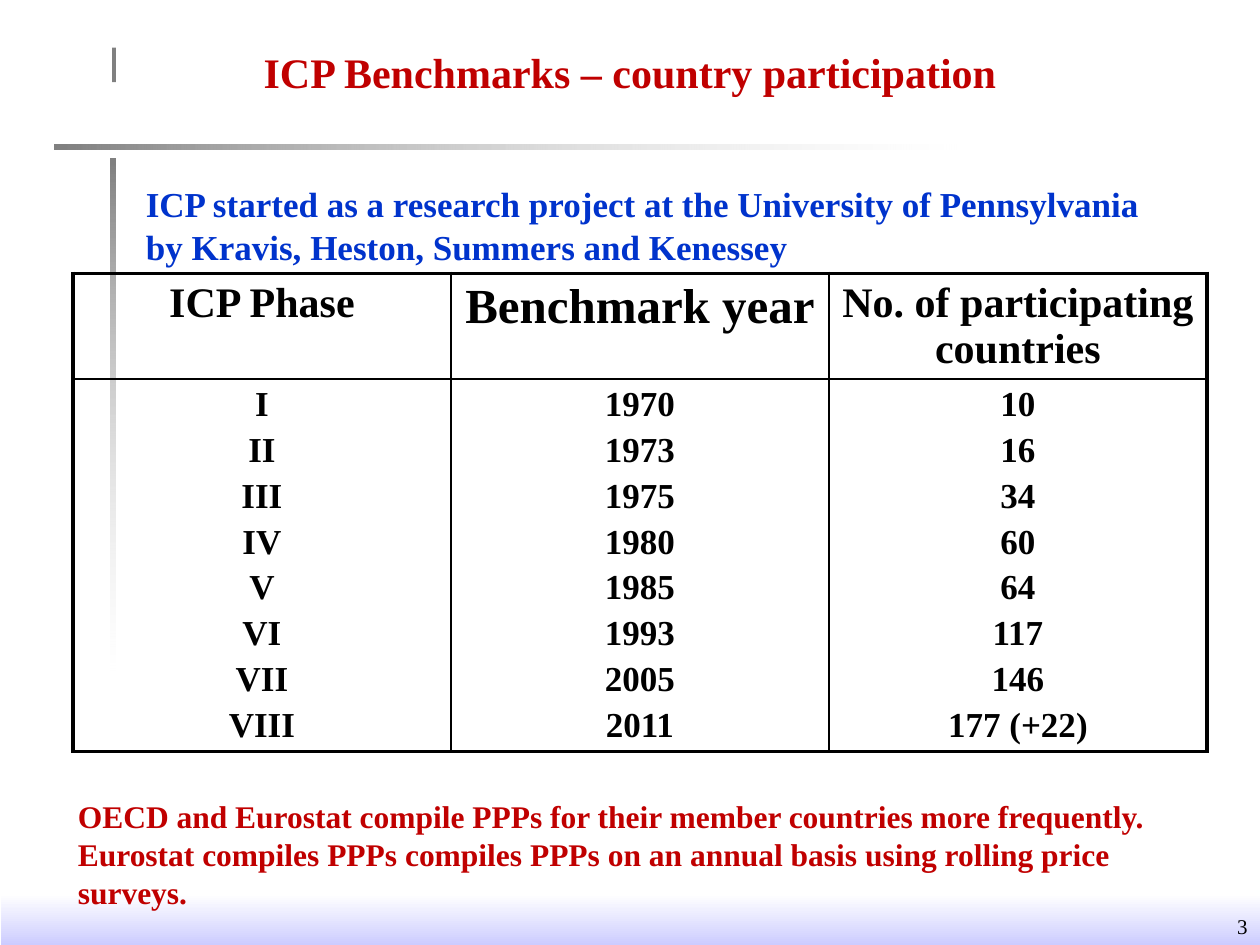
from pptx import Presentation
from pptx.dml.color import RGBColor
from pptx.enum.shapes import MSO_SHAPE
from pptx.enum.text import MSO_ANCHOR, PP_ALIGN
from pptx.oxml.ns import qn
from pptx.util import Cm, Pt
from lxml import etree

RECT = MSO_SHAPE.RECTANGLE
LEFT, CENTER, RIGHT = PP_ALIGN.LEFT, PP_ALIGN.CENTER, PP_ALIGN.RIGHT
TOP, MIDDLE = MSO_ANCHOR.TOP, MSO_ANCHOR.MIDDLE
FONT = "Times New Roman"
COLORS = {"gray": "808080", "white": "FFFFFF", "lilac": "CCCCFF",
          "black": "000000", "red": "C00000", "blue": "0033CC"}


def style(p, size, color, align, bold=True, line=None):
    p.alignment = align
    if line:
        p.line_spacing = Pt(line)
    for r in p.runs:
        r.font.name = FONT
        r.font.size = Pt(size)
        r.font.bold = bold
        r.font.color.rgb = RGBColor.from_string(COLORS[color])


def border(cell, side, width):
    ln = etree.SubElement(cell._tc.get_or_add_tcPr(), qn(f"a:ln{side}"),
                          w=str(Pt(width)))
    fill = etree.SubElement(ln, qn("a:solidFill"))
    etree.SubElement(fill, qn("a:srgbClr"), val=COLORS["black"])


prs = Presentation()
prs.slide_width, prs.slide_height = Cm(25.4), Cm(19.05)
s = prs.slides.add_slide(prs.slide_layouts[6])

# Decorative bars: left, top, width, height, start, end, angle, end opacity
bars = [
    (1.09, 2.91, 18.19, 0.1, "gray", "white", 0, 29),
    (2.23, 3.2, 0.1, 10.31, "gray", "white", 270, 29),
    (2.26, 0.96, 0.08, 0.7, "gray", None, 0, 100),
    (0.03, 18.03, 25.37, 1.02, "white", "lilac", 270, 100),
]
for x, y, w, h, start, end, angle, opacity in bars:
    sp = s.shapes.add_shape(RECT, Cm(x), Cm(y), Cm(w), Cm(h))
    sp.shadow.inherit = False
    sp.line.fill.background()
    if end is None:
        sp.fill.solid()
        sp.fill.fore_color.rgb = RGBColor.from_string(COLORS[start])
        continue
    sp.fill.gradient()
    sp.fill.gradient_angle = angle
    for stop, color in zip(sp.fill.gradient_stops, (start, end)):
        stop.color.rgb = RGBColor.from_string(COLORS[color])
    if opacity < 100:
        clr = list(sp._element.spPr.iter(qn("a:srgbClr")))[-1]
        etree.SubElement(clr, qn("a:alpha"), val=str(opacity * 1000))

# Table: one header row, one row holding a paragraph per phase
columns = [
    ("ICP Phase", 24, ["I", "II", "III", "IV", "V", "VI", "VII", "VIII"]),
    ("Benchmark year", 28,
     ["1970", "1973", "1975", "1980", "1985", "1993", "2005", "2011"]),
    ("No. of participating countries", 24,
     ["10", "16", "34", "60", "64", "117", "146", "177 (+22)"]),
]
tbl = s.shapes.add_table(2, 3, Cm(1.47), Cm(5.51), Cm(22.86), Cm(9.63)).table
tbl.first_row = tbl.horz_banding = False
tbl.rows[0].height, tbl.rows[1].height = Cm(2.13), Cm(7.5)
for c, (head, head_size, values) in enumerate(columns):
    tbl.columns[c].width = Cm(7.62)
    for row, (lines, size) in enumerate([([head], head_size), (values, 20)]):
        cell = tbl.cell(row, c)
        cell.text_frame.text = "\n".join(lines)
        for i, p in enumerate(cell.text_frame.paragraphs):
            style(p, size, "black", CENTER, line=round(size * 1.11, 1))
            if i:
                p.space_before = Pt(4)
        outer = {"L": c == 0, "R": c == 2, "T": row == 0, "B": row == 1}
        for side, thick in outer.items():
            border(cell, side, 2.25 if thick else 1)
        cell.fill.background()

# Texts: left, top, width, height, text, size, colour, align, anchor, bold, line
texts = [
    (20.19, 18.29, 5.21, 0.76, "3", 12, "black", RIGHT, TOP, False, None),
    (1.27, 0.76, 22.86, 1.37, "ICP Benchmarks – country participation",
     24, "red", CENTER, MIDDLE, True, None),
    (1.32, 15.93, 23.19, 2.57,
     "OECD and Eurostat compile PPPs for their member countries more "
     "frequently. Eurostat compiles PPPs compiles PPPs on an annual basis "
     "using rolling price surveys.", 18, "red", LEFT, TOP, True, 21.7),
    (2.69, 3.53, 21.44, 1.96,
     "ICP started as a research project at the University of Pennsylvania "
     "by Kravis, Heston, Summers and Kenessey",
     20, "blue", LEFT, TOP, True, 24.6),
]
for x, y, w, h, text, size, color, align, anchor, bold, line in texts:
    tf = s.shapes.add_textbox(Cm(x), Cm(y), Cm(w), Cm(h)).text_frame
    tf.word_wrap = True
    tf.vertical_anchor = anchor
    tf.text = text
    style(tf.paragraphs[0], size, color, align, bold, line)

prs.save("out.pptx")
